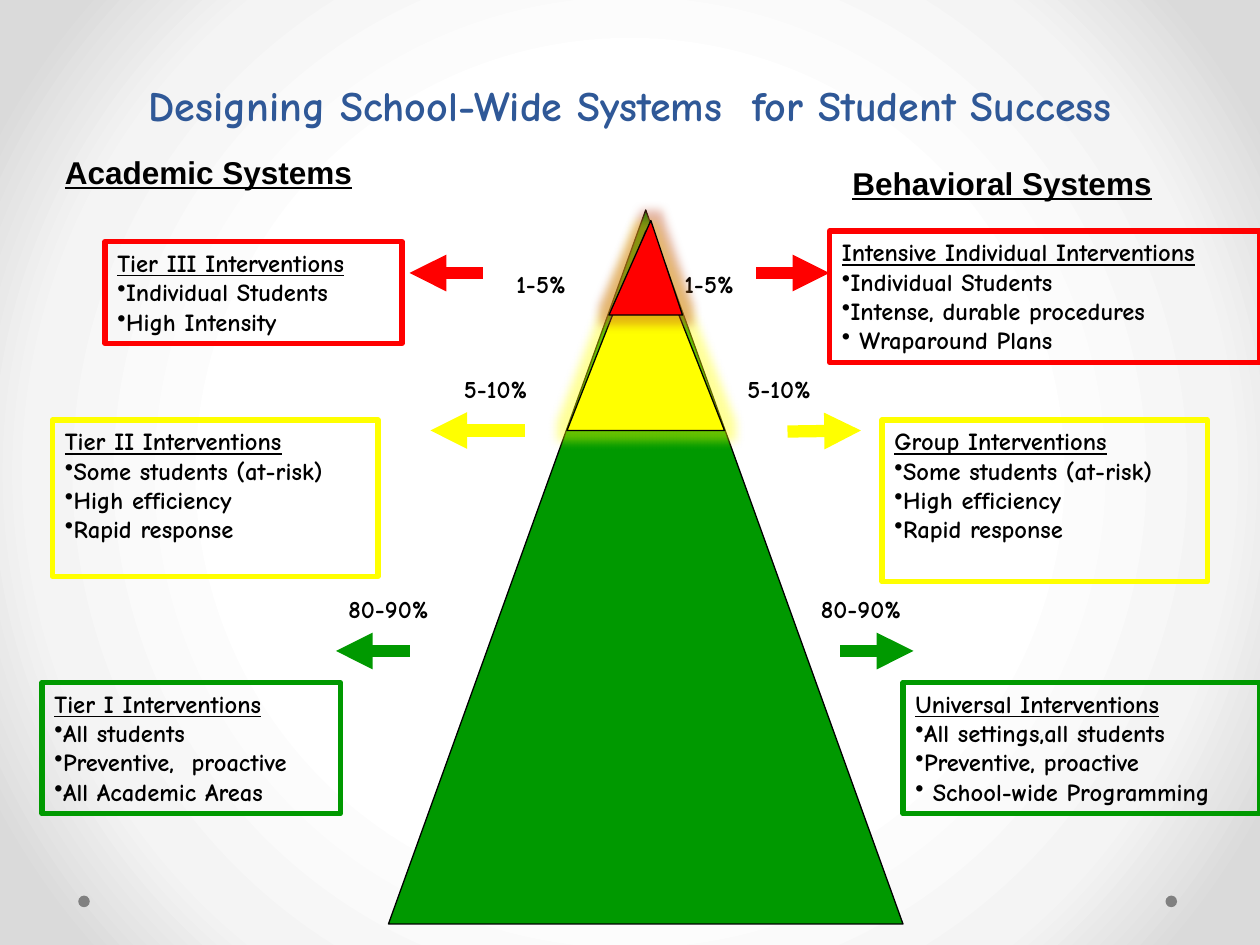
"""Draws a tiered pyramid of school-wide student support on a grid of twelfths of an inch."""
from dataclasses import dataclass

import pptx
import pptx.dml.color
import pptx.enum.shapes
import pptx.enum.text
import pptx.oxml
import pptx.oxml.ns
import pptx.util

Pt = pptx.util.Pt
Kind = pptx.enum.shapes.MSO_SHAPE
Anchor = pptx.enum.text.MSO_ANCHOR
Align = pptx.enum.text.PP_ALIGN
NS = pptx.oxml.ns.nsdecls("a", "p")


@dataclass(frozen=True)
class Theme:
    red: str = "FF0000"
    yellow: str = "FFFF00"
    green: str = "009900"
    black: str = "000000"
    blue: str = "2F5897"
    gray: str = "808080"
    rust: str = "BF4D28"
    hand: str = "Comic Neue"
    plain: str = "Arial"
    title: int = 24
    head: int = 18
    body: int = 14
    back: tuple = ((50, "FFFFFF"), (76, "F4F4F4"), (92, "DADADA"))


@dataclass(frozen=True)
class Area:
    col: float
    row: float
    cols: float
    rows: float


@dataclass(frozen=True)
class Tier:
    area: Area
    color: str
    lines: tuple
    tip: tuple
    tail: tuple


@dataclass(frozen=True)
class Label:
    area: Area
    text: str


@dataclass(frozen=True)
class Peak:
    area: Area
    color: str
    glow: str = ""
    skew: float = 0.5


T = Theme()
RISK = ("Some students (at-risk)", "High efficiency", "Rapid response")
TIERS = (
    Tier(Area(10, 23, 28.3, 9.7), T.red,
         ("Tier III Interventions", "Individual Students", "High Intensity"), (39, 26), (46, 26)),
    Tier(Area(79, 22, 41, 12.5), T.red,
         ("Intensive Individual Interventions", "Individual Students",
          "Intense, durable procedures", " Wraparound Plans"), (79, 26), (72, 26)),
    Tier(Area(5, 40, 31, 14.9), T.yellow, ("Tier II Interventions", *RISK), (41, 41), (50, 41)),
    Tier(Area(84, 40, 31, 15.4), T.yellow, ("Group Interventions", *RISK), (82, 41), (75, 41.1)),
    Tier(Area(4, 65, 28.4, 12.5), T.green,
         ("Tier I Interventions", "All students", "Preventive,  proactive",
          "All Academic Areas"), (32, 62), (39, 62)),
    Tier(Area(86, 65, 34, 12.5), T.green,
         ("Universal Interventions", "All settings,all students", "Preventive, proactive",
          " School-wide Programming"), (87, 62), (80, 62)),
)
SHARES = tuple(
    Label(Area(col, row, wide, 4), text)
    for text, row, wide, cols in (("1-5%", 25, 8.6, (48, 64)), ("5-10%", 35, 10.1, (43, 70)),
                                  ("80-90%", 56, 11.5, (32, 77)))
    for col in cols
)
HEADS = (Label(Area(5, 14, 30, 4.8), "Academic Systems"),
         Label(Area(80, 15, 31.2, 4.8), "Behavioral Systems"))
TITLE = Label(Area(6, 0, 108, 13), "Designing School-Wide Systems  for Student Success")
PEAKS = (Peak(Area(37, 20, 49, 68), T.green),
         Peak(Area(54, 22, 15, 19), T.yellow, T.yellow),
         Peak(Area(58, 21, 7, 9), T.red, T.rust, 0.57))
DOTS = (Area(7.45, 85.3, 1.1, 1.1), Area(111, 85.3, 1.1, 1.1))


def unit(n: float) -> int:
    """Turn grid steps into a length."""
    return pptx.util.Inches(n / 12)


def place(area: Area) -> tuple:
    """Give left, top, width and height of an area."""
    return tuple(unit(n) for n in (area.col, area.row, area.cols, area.rows))


def rgb(color: str):
    """Turn a hex string into a colour."""
    return pptx.dml.color.RGBColor.from_string(color)


def style(para, size: int, font: str = T.hand, color: str = T.black, under: bool = False) -> None:
    """Format every run of a paragraph."""
    for run in para.runs:
        face = run.font
        face.size, face.name, face.bold, face.underline = Pt(size), font, True, under
        face.color.rgb = rgb(color)


def paint(slide):
    """Fill the background with a round gradient."""
    stops = "".join(f'<a:gs pos="{pos * 1000}"><a:srgbClr val="{color}"/></a:gs>'
                    for pos, color in T.back)
    slide.element.cSld.insert(0, pptx.oxml.parse_xml(
        f'<p:bg {NS}><p:bgPr><a:gradFill><a:gsLst>{stops}</a:gsLst><a:path path="circle">'
        '<a:fillToRect l="50000" t="50000" r="50000" b="50000"/></a:path></a:gradFill>'
        '<a:effectLst/></p:bgPr></p:bg>'))


def shape(slide, kind, area: Area, fill: str = "", line: str = "", width: float = 0.75):
    """Add a preset shape with plain fill and line."""
    item = slide.shapes.add_shape(kind, *place(area))
    item.shadow.inherit = False
    if fill:
        item.fill.solid()
        item.fill.fore_color.rgb = rgb(fill)
    else:
        item.fill.background()
    if line:
        item.line.color.rgb = rgb(line)
        item.line.width = Pt(width)
    else:
        item.line.fill.background()
    return item


def write(slide, label: Label, size: int, wrap: bool = False, **look):
    """Add a line of free text and return its frame."""
    frame = slide.shapes.add_textbox(*place(label.area)).text_frame
    frame.word_wrap = wrap
    frame.text = label.text
    style(frame.paragraphs[0], size, **look)
    return frame


def arrow(slide, tier: Tier) -> None:
    """Draw a thick arrow from the pyramid towards a box."""
    ends = (unit(n) for n in (*tier.tip, *tier.tail))
    item = slide.shapes.add_connector(pptx.enum.shapes.MSO_CONNECTOR.STRAIGHT, *ends)
    item.line.color.rgb = rgb(tier.color)
    item.line.width = Pt(7)
    item.line._get_or_add_ln().append(pptx.oxml.parse_xml(f'<a:headEnd {NS} type="triangle"/>'))
    item._element.spPr.append(pptx.oxml.parse_xml(f'<a:effectLst {NS}/>'))


def box(slide, tier: Tier) -> None:
    """Draw a framed list with an underlined heading."""
    frame = shape(slide, Kind.RECTANGLE, tier.area, line=tier.color, width=3).text_frame
    frame.word_wrap = True
    frame.vertical_anchor = Anchor.TOP
    frame.text = "\n".join(tier.lines)
    for i, para in enumerate(frame.paragraphs):
        para.alignment = Align.LEFT
        style(para, T.body, under=i == 0)
        if i:
            para._p.get_or_add_pPr().append(pptx.oxml.parse_xml(f'<a:buChar {NS} char="•"/>'))


def peak(slide, part: Peak) -> None:
    """Draw one triangle of the pyramid."""
    item = shape(slide, Kind.ISOSCELES_TRIANGLE, part.area, part.color, T.black)
    item.adjustments[0] = part.skew
    if part.glow:
        item._element.spPr.find(pptx.oxml.ns.qn("a:effectLst")).append(pptx.oxml.parse_xml(
            f'<a:glow {NS} rad="{Pt(11)}"><a:srgbClr val="{part.glow}">'
            '<a:alpha val="40000"/></a:srgbClr></a:glow>'))


def main() -> None:
    """Build and save the slide."""
    deck = pptx.Presentation()
    deck.slide_width, deck.slide_height = unit(120), unit(90)
    slide = deck.slides.add_slide(deck.slide_layouts[6])
    paint(slide)
    for dot in DOTS:
        shape(slide, Kind.OVAL, dot, T.gray)
    for tier in TIERS:
        box(slide, tier)
        arrow(slide, tier)
    frame = write(slide, TITLE, T.title, True, color=T.blue)
    frame.vertical_anchor = Anchor.BOTTOM
    frame.paragraphs[0].alignment = Align.CENTER
    frame.paragraphs[0].line_spacing = Pt(58)
    for head in HEADS:
        write(slide, head, T.head, font=T.plain, under=True)
    for share in SHARES:
        write(slide, share, T.body)
    for part in PEAKS:
        peak(slide, part)
    deck.save("out.pptx")


if __name__ == "__main__":
    main()
